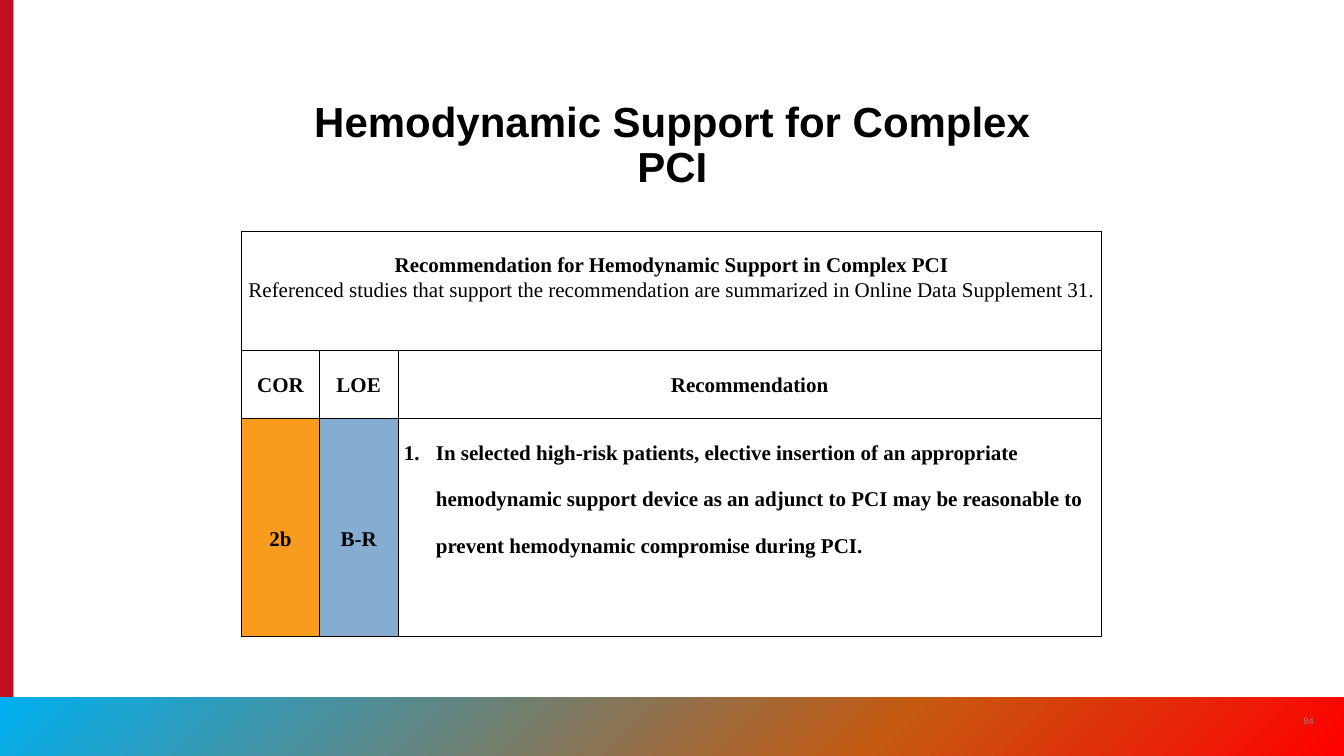
from dataclasses import dataclass

from lxml.etree import SubElement
from pptx import Presentation
from pptx.dml.color import RGBColor
from pptx.enum.shapes import MSO_SHAPE
from pptx.enum.text import MSO_ANCHOR, MSO_AUTO_SIZE, PP_ALIGN
from pptx.oxml import parse_xml
from pptx.oxml.ns import nsdecls, qn
from pptx.shapes.autoshape import Shape
from pptx.slide import Slide
from pptx.table import Table, _Cell
from pptx.text.text import _Paragraph
from pptx.util import Inches, Pt

COLOURS = {
    "black": "000000",
    "grey": "8A8B8A",
    "side": "C10E21",
    "class_2b": "F99B1C",
    "level_b": "85ADD1",
    "band_start": "00B0F0",
    "band_middle": "C55A11",
    "band_end": "FF0000",
}
BAND_STOPS = {"band_start": 0, "band_middle": 66, "band_end": 100}
COLUMN_WIDTHS = (0.92, 0.94, 8.37)
ROW_HEIGHTS = (1.42, 0.81, 2.6)


@dataclass(frozen=True)
class Line:
    text: str
    bold: bool = True
    spacing: float = 2.0
    numbered: bool = False


@dataclass(frozen=True)
class Entry:
    row: int
    column: int
    lines: tuple[Line, ...]
    fill: str = ""


ENTRIES = (
    Entry(0, 0, (
        Line("Recommendation for Hemodynamic Support in Complex PCI"),
        Line("Referenced studies that support the recommendation are summarized "
             "in Online Data Supplement 31.", bold=False, spacing=1.07),
    )),
    Entry(1, 0, (Line("COR"),)),
    Entry(1, 1, (Line("LOE"),)),
    Entry(1, 2, (Line("Recommendation"),)),
    Entry(2, 0, (Line("2b"),), "class_2b"),
    Entry(2, 1, (Line("B-R"),), "level_b"),
    Entry(2, 2, (
        Line("In selected high-risk patients, elective insertion of an appropriate "
             "hemodynamic support device as an adjunct to PCI may be reasonable to "
             "prevent hemodynamic compromise during PCI.", numbered=True),
    )),
)


def colour(name: str) -> RGBColor:
    return RGBColor.from_string(COLOURS[name])


def add_span(para: _Paragraph, text: str, font: str, size: float,
             bold: bool = False, ink: str = "black") -> None:
    span = para.add_run()
    span.text = text
    span.font.name = font
    span.font.size = Pt(size)
    span.font.bold = bold
    span.font.color.rgb = colour(ink)


def add_bar(page: Slide, left: float, top: float, width: float, height: float) -> Shape:
    bar = page.shapes.add_shape(MSO_SHAPE.RECTANGLE, Inches(left), Inches(top),
                                Inches(width), Inches(height))
    bar.shadow.inherit = False
    bar.line.fill.background()
    return bar


def add_edges(page: Slide) -> None:
    """Draw the red side bar and the gradient band at the foot."""
    side = add_bar(page, 0, 0, 0.16, 9)
    side.fill.solid()
    side.fill.fore_color.rgb = colour("side")

    band = add_bar(page, 0, 8.3, 16, 0.7)
    stops = "".join(
        f'<a:gs pos="{percent * 1000}"><a:srgbClr val="{COLOURS[name]}"/></a:gs>'
        for name, percent in BAND_STOPS.items())
    gradient = parse_xml(
        f'<a:gradFill {nsdecls("a")} rotWithShape="1"><a:gsLst>{stops}</a:gsLst>'
        '<a:lin ang="2700000" scaled="0"/></a:gradFill>')
    band._element.spPr.find(qn("a:prstGeom")).addnext(gradient)


def add_title(page: Slide) -> None:
    title = page.shapes.title
    title.left, title.top = Inches(3.34), Inches(1.08)
    title.width, title.height = Inches(9.33), Inches(1.25)
    frame = title.text_frame
    frame.word_wrap = True
    frame.auto_size = MSO_AUTO_SIZE.NONE
    frame.vertical_anchor = MSO_ANCHOR.BOTTOM
    para = frame.paragraphs[0]
    para.alignment = PP_ALIGN.CENTER
    para.line_spacing = 0.9
    add_span(para, "Hemodynamic Support for Complex PCI", "Arial", 36, bold=True)


def add_page_number(page: Slide) -> None:
    box = page.shapes.add_textbox(Inches(15.34), Inches(8.34), Inches(0.48), Inches(0.48))
    frame = box.text_frame
    frame.word_wrap = True
    frame.vertical_anchor = MSO_ANCHOR.MIDDLE
    para = frame.paragraphs[0]
    para.alignment = PP_ALIGN.CENTER
    add_span(para, "84", "Arial", 8, ink="grey")


def number_paragraph(para: _Paragraph) -> None:
    """Give the paragraph a black automatic number and a hanging indent."""
    properties = para._p.get_or_add_pPr()
    properties.set("marL", str(Inches(0.38)))
    properties.set("indent", str(-Inches(0.38)))
    bullet_colour = SubElement(properties, qn("a:buClr"))
    SubElement(bullet_colour, qn("a:srgbClr"), val=COLOURS["black"])
    SubElement(properties, qn("a:buAutoNum"), type="arabicPeriod")


def add_borders(cell: _Cell) -> None:
    properties = cell._tc.get_or_add_tcPr()
    for position, side in enumerate("LRTB"):
        properties.insert(position, parse_xml(
            f'<a:ln{side} {nsdecls("a")} w="{Pt(1)}"><a:solidFill>'
            f'<a:srgbClr val="{COLOURS["black"]}"/></a:solidFill></a:ln{side}>'))


def fill_entry(table: Table, entry: Entry) -> None:
    cell = table.cell(entry.row, entry.column)
    if entry.fill:
        cell.fill.solid()
        cell.fill.fore_color.rgb = colour(entry.fill)
        cell.vertical_anchor = MSO_ANCHOR.MIDDLE
    frame = cell.text_frame
    for index, line in enumerate(entry.lines):
        para = frame.add_paragraph() if index else frame.paragraphs[0]
        if line.numbered:
            number_paragraph(para)
        else:
            para.alignment = PP_ALIGN.CENTER
        para.line_spacing = line.spacing
        add_span(para, line.text, "Times New Roman", 18, bold=line.bold)


def add_recommendations(page: Slide) -> None:
    table = page.shapes.add_table(
        len(ROW_HEIGHTS), len(COLUMN_WIDTHS), Inches(2.88), Inches(2.75),
        Inches(sum(COLUMN_WIDTHS)), Inches(sum(ROW_HEIGHTS))).table
    table.first_row = table.horz_banding = False
    for column, width in zip(table.columns, COLUMN_WIDTHS):
        column.width = Inches(width)
    for row, height in zip(table.rows, ROW_HEIGHTS):
        row.height = Inches(height)
    for cell in table.iter_cells():
        cell.margin_left = cell.margin_right = Inches(0.07)
        cell.margin_top = cell.margin_bottom = 0
        cell.fill.background()
        add_borders(cell)
    table.cell(0, 0).merge(table.cell(0, len(COLUMN_WIDTHS) - 1))
    for entry in ENTRIES:
        fill_entry(table, entry)


def main() -> None:
    deck = Presentation()
    deck.slide_width, deck.slide_height = Inches(16), Inches(9)
    page = deck.slides.add_slide(deck.slide_layouts[0])
    subtitle = page.placeholders[1]._element
    subtitle.getparent().remove(subtitle)
    add_edges(page)
    add_page_number(page)
    add_title(page)
    add_recommendations(page)
    deck.save("out.pptx")


if __name__ == "__main__":
    main()
